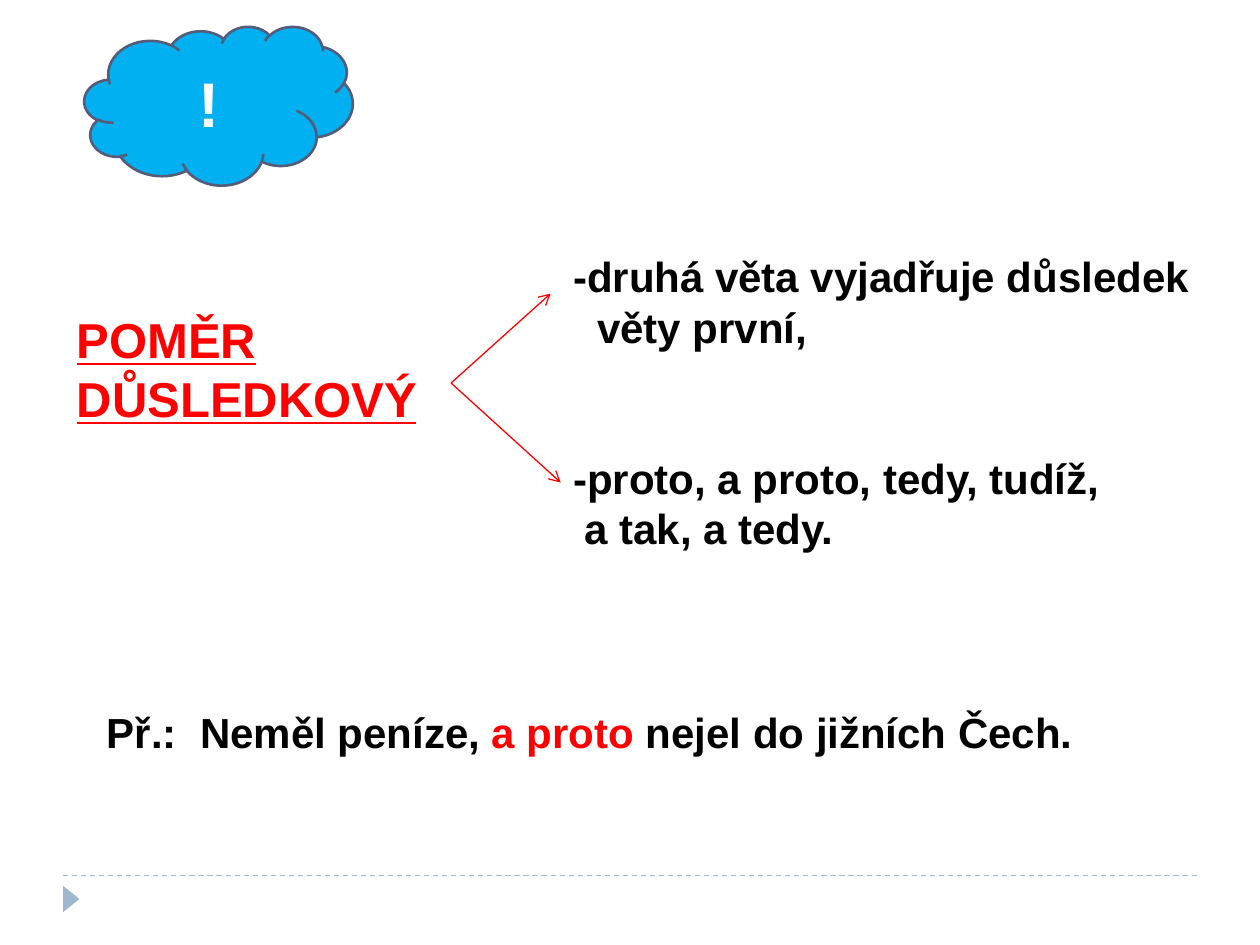
from dataclasses import dataclass

from pptx import Presentation
from pptx import util as u
from pptx.dml.color import RGBColor
from pptx.enum import dml, shapes, text
from pptx.oxml.ns import qn
from lxml import etree


@dataclass(frozen=True)
class Theme:
    font: str = "Arial"
    black: str = "000000"
    white: str = "FFFFFF"
    red: str = "FF0000"
    sky: str = "00B0F0"
    slate: str = "545C79"
    mist: str = "9FB8CD"
    body: int = 24
    head: int = 28
    mark: int = 36
    lead: float = 1.2


@dataclass(frozen=True)
class Run:
    words: str
    color: str
    size: int
    under: bool = False


@dataclass(frozen=True)
class Para:
    runs: tuple[Run, ...]
    before: float = 0
    indent: float = 0
    tab: float = 0


@dataclass(frozen=True)
class Line:
    start: tuple[float, float]
    end: tuple[float, float]
    color: str
    arrow: bool = False


T = Theme()


def rgb(code: str) -> RGBColor:
    return RGBColor.from_string(code)


def body(words: str, color: str = T.black) -> Run:
    return Run(words, color, T.body)


def place(item, left: float, top: float, width: float, height: float) -> None:
    item.left, item.top = u.Inches(left), u.Inches(top)
    item.width, item.height = u.Inches(width), u.Inches(height)


def write(frame, paras: list[Para], align=text.PP_ALIGN.LEFT,
          anchor=text.MSO_ANCHOR.TOP) -> None:
    frame.word_wrap = True
    frame.auto_size = text.MSO_AUTO_SIZE.NONE
    frame.vertical_anchor = anchor
    for i, para in enumerate(paras):
        p = frame.paragraphs[0] if i == 0 else frame.add_paragraph()
        p.alignment = align
        p.line_spacing = u.Pt(para.runs[0].size * T.lead)
        p.space_before = u.Pt(para.before)
        props = p._p.get_or_add_pPr()
        if para.indent:
            props.set("marL", str(u.Inches(para.indent)))
        if para.tab:
            tabs = etree.SubElement(props, qn("a:tabLst"))
            etree.SubElement(tabs, qn("a:tab"), pos=str(u.Inches(para.tab)), algn="l")
        for run in para.runs:
            r = p.add_run()
            r.text = run.words
            r.font.name, r.font.size = T.font, u.Pt(run.size)
            r.font.bold, r.font.underline = True, run.under
            r.font.color.rgb = rgb(run.color)


def add_text(slide, box: tuple[float, ...], paras: list[Para]) -> None:
    write(slide.shapes.add_textbox(*map(u.Inches, box)).text_frame, paras)


def add_line(slide, line: Line):
    item = slide.shapes.add_connector(
        shapes.MSO_CONNECTOR.STRAIGHT, *map(u.Inches, line.start + line.end))
    item.line.color.rgb = rgb(line.color)
    item.line.width = u.Pt(0.75)
    if line.arrow:
        etree.SubElement(item.line._get_or_add_ln(), qn("a:tailEnd"), type="arrow")
    etree.SubElement(item._element.spPr, qn("a:effectLst"))
    return item


def add_shape(slide, kind, box: tuple[float, ...], fill: str):
    item = slide.shapes.add_shape(kind, *map(u.Inches, box))
    item.shadow.inherit = False
    item.fill.solid()
    item.fill.fore_color.rgb = rgb(fill)
    item.line.fill.background()
    return item


def main() -> None:
    deck = Presentation()
    deck.slide_width, deck.slide_height = u.Inches(10), u.Inches(7.5)
    slide = deck.slides.add_slide(deck.slide_layouts[5])

    rule = add_line(slide, Line((0.5, 6.95), (9.5, 6.95), T.mist))
    rule.line.dash_style = dml.MSO_LINE.DASH
    wedge = add_shape(slide, shapes.MSO_SHAPE.ISOSCELES_TRIANGLE,
                      (0.46, 7.07, 0.21, 0.13), T.mist)
    wedge.rotation = 90

    title = slide.shapes.title
    place(title, 0.51, 2.41, 2.93, 1.04)
    write(title.text_frame, [Para((Run(word, T.red, T.head, True),))
                             for word in ("POMĚR", "DŮSLEDKOVÝ")])

    add_text(slide, (4.45, 1.94, 5.14, 2.52), [
        Para((body("-druhá věta vyjadřuje důsledek"),)),
        Para((body("věty první,"),), indent=0.19),
        Para((body("-proto, a proto, tedy, tudíž,"),), before=2 * T.body * T.lead),
        Para((body("a tak, a tedy."),), indent=0.09),
    ])

    fork = (3.58, 3.04)
    for tip in ((4.37, 2.33), (4.45, 3.83)):
        add_line(slide, Line(fork, tip, T.red, True))

    add_text(slide, (0.75, 5.56, 7.93, 0.5), [
        Para((body("Př.:\tNeměl peníze, "), body("a proto ", T.red),
              body("nejel do jižních Čech.")), tab=0.74),
    ])

    cloud = add_shape(slide, shapes.MSO_SHAPE.CLOUD, (0.67, 0.21, 2.13, 1.26), T.sky)
    cloud.line.color.rgb = rgb(T.slate)
    cloud.line.width = u.Pt(1.5)
    write(cloud.text_frame, [Para((Run("!", T.white, T.mark),))],
          text.PP_ALIGN.CENTER, text.MSO_ANCHOR.MIDDLE)

    deck.save("out.pptx")


if __name__ == "__main__":
    main()
